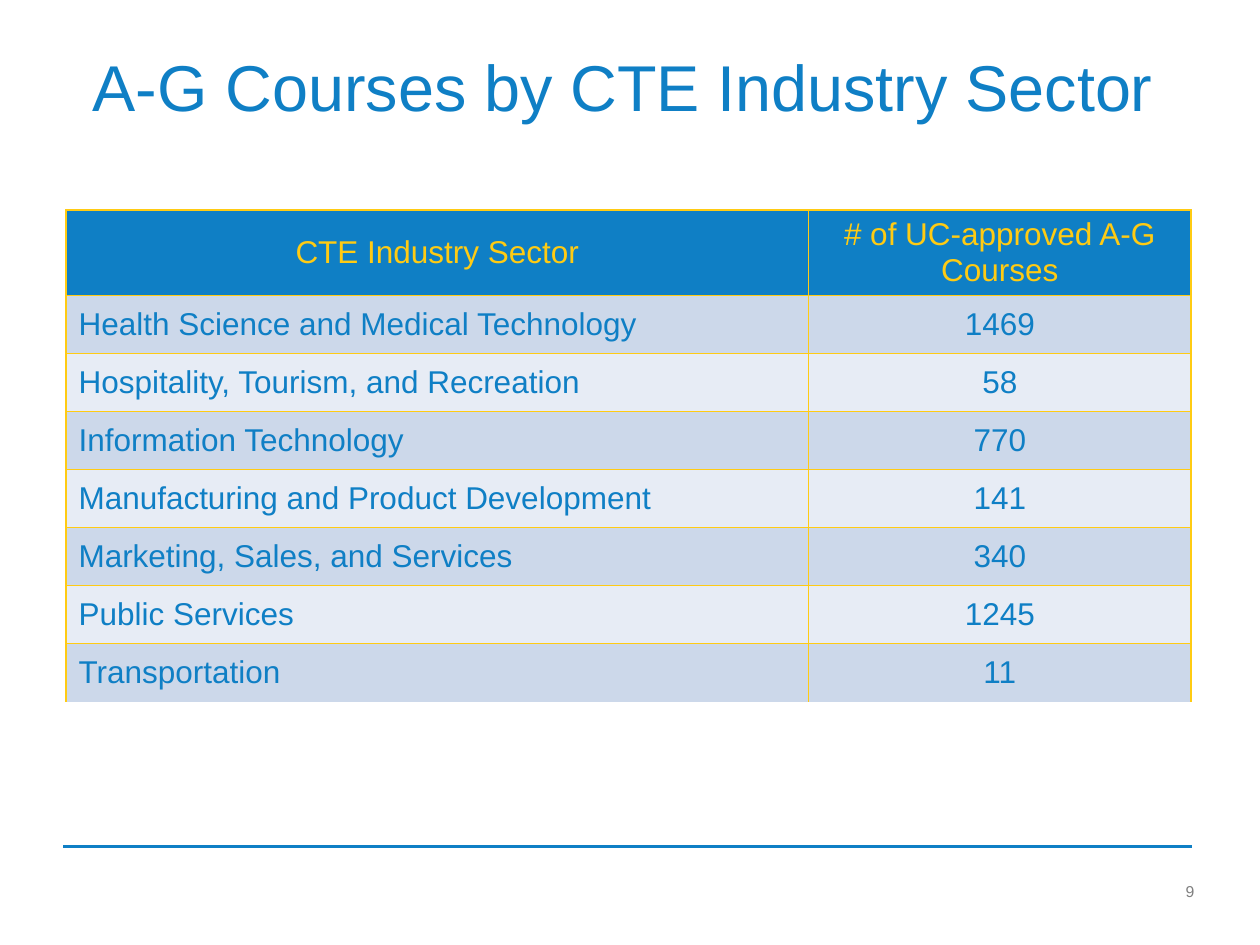
import pptx
import pptx.dml.color
import pptx.enum.shapes
import pptx.enum.text
import pptx.oxml
import pptx.oxml.ns
import pptx.util
from lxml import etree

Cm = pptx.util.Cm
Pt = pptx.util.Pt
Align = pptx.enum.text.PP_ALIGN
Anchor = pptx.enum.text.MSO_ANCHOR

BLUE, YELLOW, GREY = "0F7FC5", "FFCB13", "808080"
BANDS = ["CCD8EA", "E7ECF5"]


def color(hex_code):
    return pptx.dml.color.RGBColor.from_string(hex_code)


def write(frame, text, size=18, hue=BLUE, font="Arial", align=Align.LEFT, spacing=None):
    """Put one formatted paragraph in a text frame."""
    paragraph = frame.paragraphs[0]
    paragraph.alignment = align
    if spacing:
        paragraph.line_spacing = spacing
    run = paragraph.add_run()
    run.text = text
    run.font.name = font
    run.font.size = Pt(size)
    run.font.color.rgb = color(hue)


class SlideBuilder:
    def __init__(self, slide, border=YELLOW, border_width=1):
        self.slide = slide
        self.border = border
        self.border_width = border_width

    def text(self, text, left, top, width, height, **style):
        frame = self.slide.shapes.add_textbox(Cm(left), Cm(top), Cm(width), Cm(height)).text_frame
        frame.word_wrap = True
        frame.margin_left = frame.margin_top = frame.margin_right = frame.margin_bottom = 0
        write(frame, text, **style)

    def rule(self, left, right, y, hue, width):
        rule = self.slide.shapes.add_connector(
            pptx.enum.shapes.MSO_CONNECTOR.STRAIGHT, Cm(left), Cm(y), Cm(right), Cm(y))
        rule.line.color.rgb = color(hue)
        rule.line.width = Pt(width)
        etree.SubElement(rule._element.spPr, pptx.oxml.ns.qn("a:effectLst"))

    def borders(self, cell, sides):
        properties = cell._tc.get_or_add_tcPr()
        for side in "LRTB":
            paint = (f'<a:solidFill><a:srgbClr val="{self.border}"/></a:solidFill>'
                     if side in sides else "<a:noFill/>")
            properties.append(pptx.oxml.parse_xml(
                f'<a:ln{side} {pptx.oxml.ns.nsdecls("a")} w="{Pt(self.border_width)}">'
                f'{paint}</a:ln{side}>'))

    def table(self, rows, left, top, widths, header_height, row_height):
        height = header_height + row_height * (len(rows) - 1)
        table = self.slide.shapes.add_table(
            len(rows), len(widths), Cm(left), Cm(top), Cm(sum(widths)), Cm(height)).table
        for column, width in zip(table.columns, widths):
            column.width = Cm(width)
        for r, values in enumerate(rows):
            is_header = r == 0
            table.rows[r].height = Cm(header_height if is_header else row_height)
            for c, value in enumerate(values):
                cell = table.cell(r, c)
                # The last row is open at the bottom
                self.borders(cell, "LRT" if r == len(rows) - 1 else "LRTB")
                cell.fill.solid()
                cell.fill.fore_color.rgb = color(BLUE if is_header else BANDS[(r - 1) % 2])
                cell.vertical_anchor = Anchor.MIDDLE
                cell.margin_top = cell.margin_bottom = Cm(0.1)
                write(cell.text_frame, value, hue=YELLOW if is_header else BLUE,
                      align=Align.CENTER if is_header or c > 0 else Align.LEFT)


def main():
    presentation = pptx.Presentation()
    presentation.slide_width, presentation.slide_height = Cm(25.4), Cm(19.05)
    builder = SlideBuilder(presentation.slides.add_slide(presentation.slide_layouts[6]))

    # Title
    builder.text("A-G Courses by CTE Industry Sector", 1.22, 1.22, 22.68, 1.4,
                 size=37, align=Align.CENTER, spacing=0.82)

    # Courses per sector
    sectors = [
        ("CTE Industry Sector", "# of UC-approved A-G Courses"),
        ("Health Science and Medical Technology", "1469"),
        ("Hospitality, Tourism, and Recreation", "58"),
        ("Information Technology", "770"),
        ("Manufacturing and Product Development", "141"),
        ("Marketing, Sales, and Services", "340"),
        ("Public Services", "1245"),
        ("Transportation", "11"),
    ]
    builder.table(sectors, 1.33, 4.23, [14.97, 7.71], header_height=1.7, row_height=1.17)

    # Footer rule and page number
    builder.rule(1.27, 24.03, 17.07, BLUE, 1.5)
    builder.text("9", 23.9, 17.78, 0.76, 0.38, size=9, hue=GREY)

    presentation.save("out.pptx")


if __name__ == "__main__":
    main()
